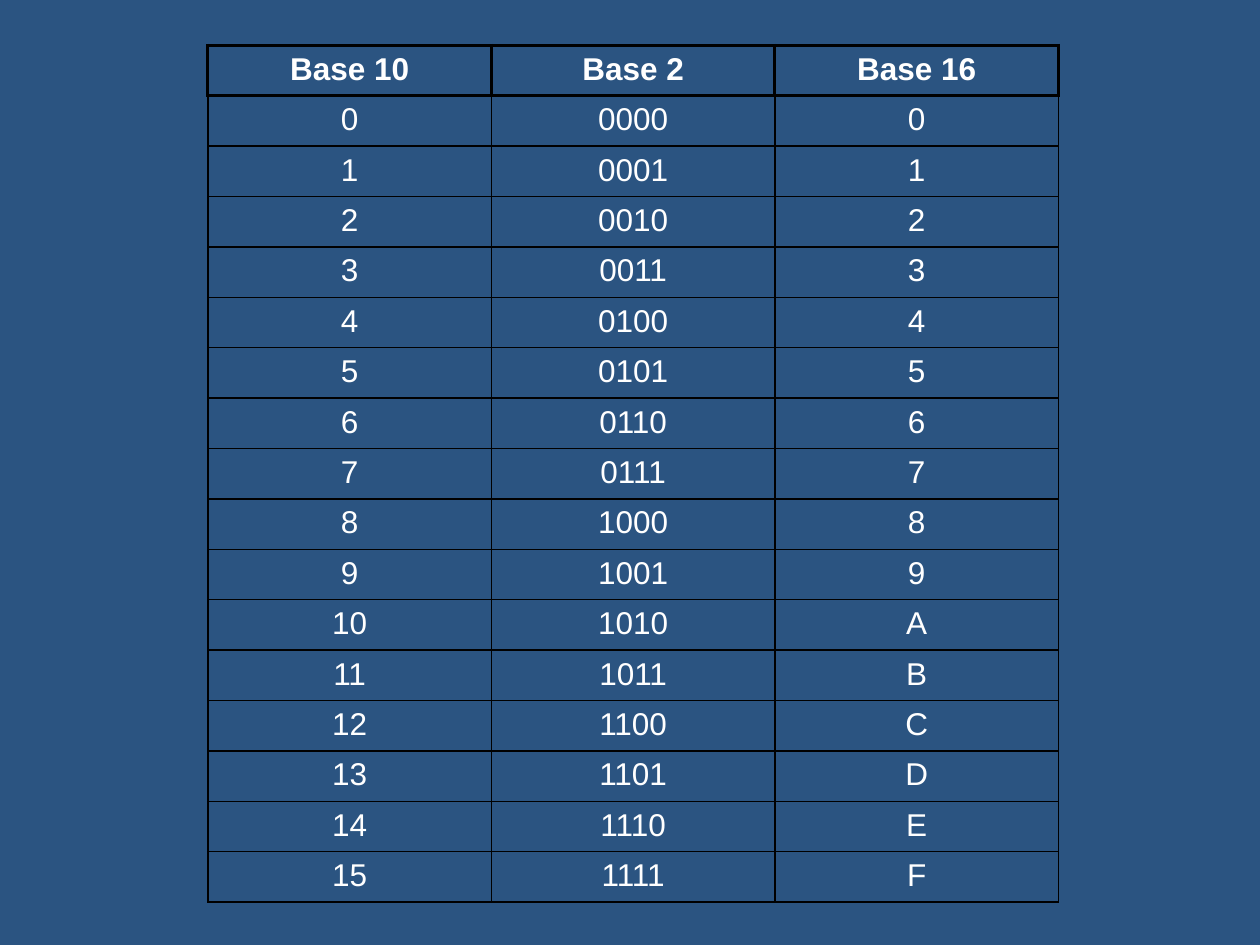
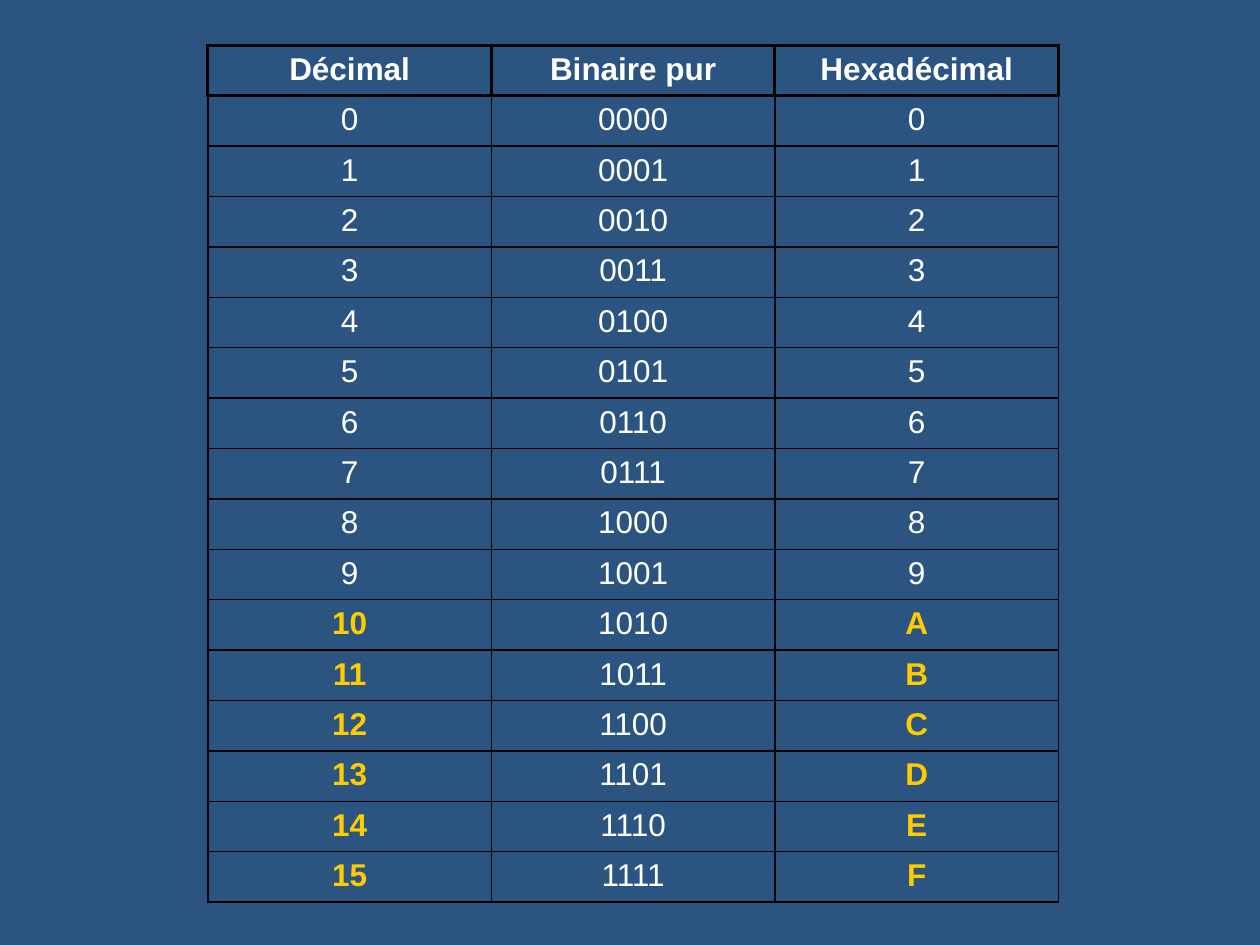
from dataclasses import dataclass

import lxml.etree
import pptx
import pptx.dml.color
import pptx.enum.text
import pptx.oxml.ns
import pptx.util

Inches = pptx.util.Inches


@dataclass(frozen=True)
class Theme:
    background: str = "2B5481"
    text: str = "FFFFFF"
    highlight: str = "FFCC00"
    border: str = "000000"
    font: str = "Arial"
    text_size: int = 18
    thin_line: int = 1
    thick_line: int = 2


theme = Theme()


def color(value):
    return pptx.dml.color.RGBColor.from_string(value)


def add_border(cell, side, width):
    """Draw one side (L, R, T or B) of a table cell."""
    qn = pptx.oxml.ns.qn
    properties = cell._tc.get_or_add_tcPr()
    line = lxml.etree.SubElement(properties, qn(f"a:ln{side}"), w=str(pptx.util.Pt(width)))
    fill = lxml.etree.SubElement(line, qn("a:solidFill"))
    lxml.etree.SubElement(fill, qn("a:srgbClr"), val=theme.border)


# Deck and shared background
deck = pptx.Presentation()
deck.slide_width, deck.slide_height = Inches(10), Inches(7.5)
master_fill = deck.slide_master.background.fill
master_fill.solid()
master_fill.fore_color.rgb = color(theme.background)

# Conversion table: the numbers 0 to 15 in three bases
column_width, row_height = 2.25, 0.4
hanging_indent = Inches(0.38)
number_rows = [(f"{number}", f"{number:04b}", f"{number:X}") for number in range(16)]

# Header row of each slide, and whether the letter digits stand out
pages = [
    (("Base 10", "Base 2", "Base 16"), False),
    (("Décimal", "Binaire pur", "Hexadécimal"), True),
]

for headings, highlight_letters in pages:
    page = deck.slides.add_slide(deck.slide_layouts[6])
    rows = [headings] + number_rows
    table = page.shapes.add_table(
        len(rows), len(headings), Inches(1.65), Inches(0.36),
        Inches(column_width * len(headings)), Inches(row_height * len(rows)),
    ).table
    table.first_row = table.horz_banding = False
    for column in table.columns:
        column.width = Inches(column_width)

    for row_index, texts in enumerate(rows):
        table.rows[row_index].height = Inches(row_height)
        is_header = row_index == 0
        for column_index, text in enumerate(texts):
            cell = table.cell(row_index, column_index)

            # Thick lines around the header, thin ones elsewhere
            for side in "LRTB":
                thick = is_header or (row_index == 1 and side == "T")
                add_border(cell, side, theme.thick_line if thick else theme.thin_line)
            cell.fill.background()

            # Centred text; decimal and hexadecimal values from 10 up may stand out
            highlighted = highlight_letters and row_index > 10 and column_index != 1
            cell.text_frame.text = text
            para = cell.text_frame.paragraphs[0]
            para.alignment = pptx.enum.text.PP_ALIGN.CENTER
            indents = para._p.get_or_add_pPr()
            indents.set("marL", str(hanging_indent))
            indents.set("indent", str(-hanging_indent))
            span = para.runs[0]
            span.font.name = theme.font
            span.font.size = pptx.util.Pt(theme.text_size)
            span.font.bold = is_header or highlighted
            span.font.color.rgb = color(theme.highlight if highlighted else theme.text)

deck.save("out.pptx")
